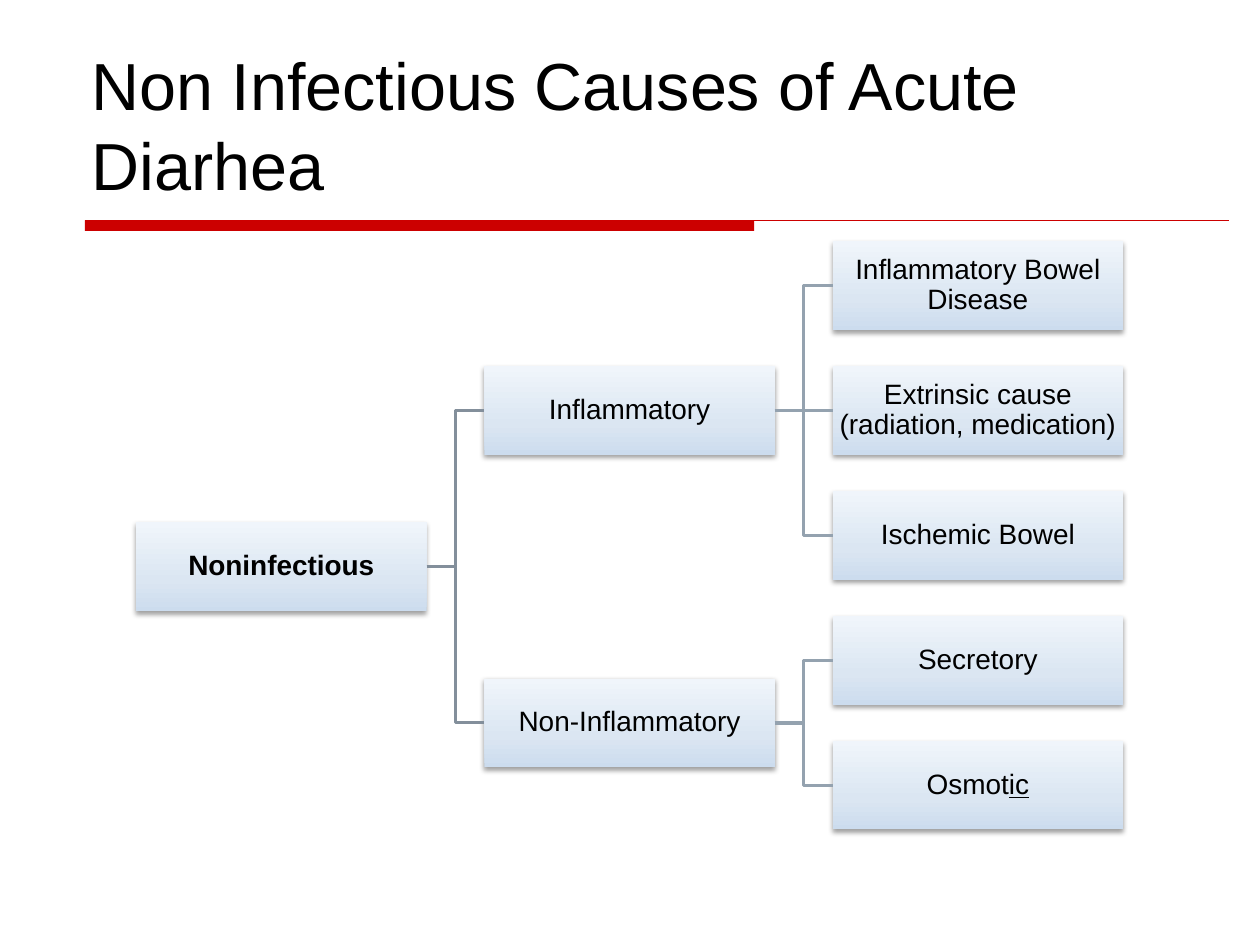
from collections import namedtuple
from copy import deepcopy
from dataclasses import dataclass
from itertools import count

from pptx import Presentation
from pptx.dml.color import RGBColor
from pptx.enum.shapes import MSO_CONNECTOR as Connector, MSO_SHAPE as Shape
from pptx.enum.text import MSO_ANCHOR as Anchor, MSO_AUTO_SIZE as AutoSize, PP_ALIGN as Align
from pptx.oxml.ns import qn
from pptx.oxml.xmlchemy import OxmlElement
from pptx.util import Pt

Box = namedtuple("Box", "left top width height")


@dataclass(frozen=True)
class Theme:
    """Colours and type sizes of the slide."""
    font: str = "Arial"
    text: str = "000000"
    accent: str = "CC0000"
    shadow: str = "000000"
    gradient: tuple = ((0, "CCDCEE"), (0.35, "DBE6F2"), (1, "F0F5FB"))
    branches: tuple = ("838F9B", "94A2AF")
    title_size: int = 38
    node_size: int = 16


@dataclass(frozen=True)
class Cause:
    """A cause of diarrhea and the causes below it."""
    label: str
    children: tuple = ()
    bold: bool = False
    underlined_end: str = ""


THEME = Theme()
TITLE = Box(45, 24, 630, 96)
RULE = Box(48.5, 126, 653.5, 6)
TREE = Box(77.8, 138, 564, 336)
NODE_WIDTH, NODE_HEIGHT = 166, 50.6
LEVELS, LEAVES = 3, 5

CAUSES = Cause("Noninfectious", (
    Cause("Inflammatory", (
        Cause("Inflammatory Bowel Disease"),
        Cause("Extrinsic cause (radiation, medication)"),
        Cause("Ischemic Bowel"),
    )),
    Cause("Non-Inflammatory", (
        Cause("Secretory"),
        Cause("Osmot", underlined_end="ic"),
    )),
), bold=True)


def set_values(target, **values):
    """Set each named attribute of the target."""
    for name, value in values.items():
        setattr(target, name, value)


def style_font(font, size, **values):
    """Give a font the theme's face and colour."""
    set_values(font, name=THEME.font, size=Pt(size), **values)
    font.color.rgb = RGBColor.from_string(THEME.text)


def add_line(slide, kind, start, end, colour, width):
    """Add a connector without a shadow between two points."""
    line = slide.shapes.add_connector(kind, *(Pt(value) for value in (*start, *end)))
    line.line.color.rgb = RGBColor.from_string(colour)
    line.line.width = Pt(width)
    line._element.spPr.append(OxmlElement("a:effectLst"))
    return line


def add_title(slide, box, text):
    """Place the title at the bottom of its box."""
    title = slide.shapes.title
    set_values(title, **{side: Pt(value) for side, value in box._asdict().items()})
    frame = title.text_frame
    frame.text = text
    set_values(frame, word_wrap=True, auto_size=AutoSize.NONE, vertical_anchor=Anchor.BOTTOM)
    paragraph = frame.paragraphs[0]
    paragraph.alignment = Align.LEFT
    style_font(paragraph.runs[0].font, THEME.title_size)


def add_rule(slide, box):
    """Draw the thick and thin rule under the title."""
    bar = slide.shapes.add_shape(
        Shape.RECTANGLE, Pt(box.left), Pt(box.top), Pt(382.5), Pt(box.height))
    bar.shadow.inherit = False
    bar.fill.solid()
    bar.fill.fore_color.rgb = RGBColor.from_string(THEME.accent)
    bar.line.fill.background()
    add_line(slide, Connector.STRAIGHT, (box.left, box.top),
             (box.left + box.width, box.top), THEME.accent, 0.75)


def fill_gradient(shape):
    """Fill a shape with the theme's vertical gradient."""
    shape.fill.gradient()
    shape.fill.gradient_angle = 90
    stop_list = shape._element.spPr.find(qn("a:gradFill")).find(qn("a:gsLst"))
    stop_list.append(deepcopy(stop_list[-1]))
    for stop, (position, colour) in zip(shape.fill.gradient_stops, THEME.gradient):
        stop.position = position
        stop.color.rgb = RGBColor.from_string(colour)


def add_shadow(shape):
    """Add a soft shadow below a shape."""
    shape.shadow.inherit = False
    shadow = OxmlElement("a:outerShdw")
    for name, value in {"blurRad": Pt(3.1), "dist": Pt(1.6), "dir": 5400000,
                        "rotWithShape": 0}.items():
        shadow.set(name, str(int(value)))
    colour, alpha = OxmlElement("a:srgbClr"), OxmlElement("a:alpha")
    colour.set("val", THEME.shadow)
    alpha.set("val", "38000")
    colour.append(alpha)
    shadow.append(colour)
    shape._element.spPr.find(qn("a:effectLst")).append(shadow)


def add_node(slide, box, cause):
    """Draw one labelled box of the tree."""
    node = slide.shapes.add_shape(Shape.RECTANGLE, *(Pt(value) for value in box))
    fill_gradient(node)
    node.line.fill.background()
    add_shadow(node)
    frame = node.text_frame
    sides = ("margin_left", "margin_top", "margin_right", "margin_bottom")
    set_values(frame, word_wrap=True, vertical_anchor=Anchor.MIDDLE,
               **dict.fromkeys(sides, Pt(0.8)))
    paragraph = frame.paragraphs[0]
    set_values(paragraph, alignment=Align.CENTER, line_spacing=0.9)
    for text, underline in ((cause.label, None), (cause.underlined_end, True)):
        if text:
            run = paragraph.add_run()
            run.text = text
            style_font(run.font, THEME.node_size, bold=cause.bold, underline=underline)
    return node


def add_branch(slide, box, cause, leaf_tops, level=0):
    """Draw a cause centred on its children and return its box and shape."""
    children = [add_branch(slide, box, child, leaf_tops, level + 1)
                for child in cause.children]
    tops = [child_box.top for child_box, _ in children] or [next(leaf_tops)]
    column_pitch = (box.width - NODE_WIDTH) / (LEVELS - 1)
    node_box = Box(box.left + level * column_pitch, sum(tops) / len(tops),
                   NODE_WIDTH, NODE_HEIGHT)
    node = add_node(slide, node_box, cause)
    start = (node_box.left + NODE_WIDTH, node_box.top + NODE_HEIGHT / 2)
    for child_box, child in children:
        end = (child_box.left, child_box.top + NODE_HEIGHT / 2)
        level_with_child = abs(start[1] - end[1]) < 0.1
        kind = Connector.STRAIGHT if level_with_child else Connector.ELBOW
        line = add_line(slide, kind, start, end, THEME.branches[level], 2)
        line.begin_connect(node, 3)
        line.end_connect(child, 1)
    return node_box, node


def add_tree(slide, box, root):
    """Draw the tree of causes with evenly spaced leaves."""
    leaf_pitch = (box.height - NODE_HEIGHT) / (LEAVES - 1)
    add_branch(slide, box, root, count(box.top, leaf_pitch))


def main():
    """Build and save the slide."""
    presentation = Presentation()
    set_values(presentation, slide_width=Pt(720), slide_height=Pt(540))
    slide = presentation.slides.add_slide(presentation.slide_layouts[5])
    add_rule(slide, RULE)
    add_title(slide, TITLE, "Non Infectious Causes of Acute Diarhea")
    add_tree(slide, TREE, CAUSES)
    presentation.save("out.pptx")


if __name__ == "__main__":
    main()
